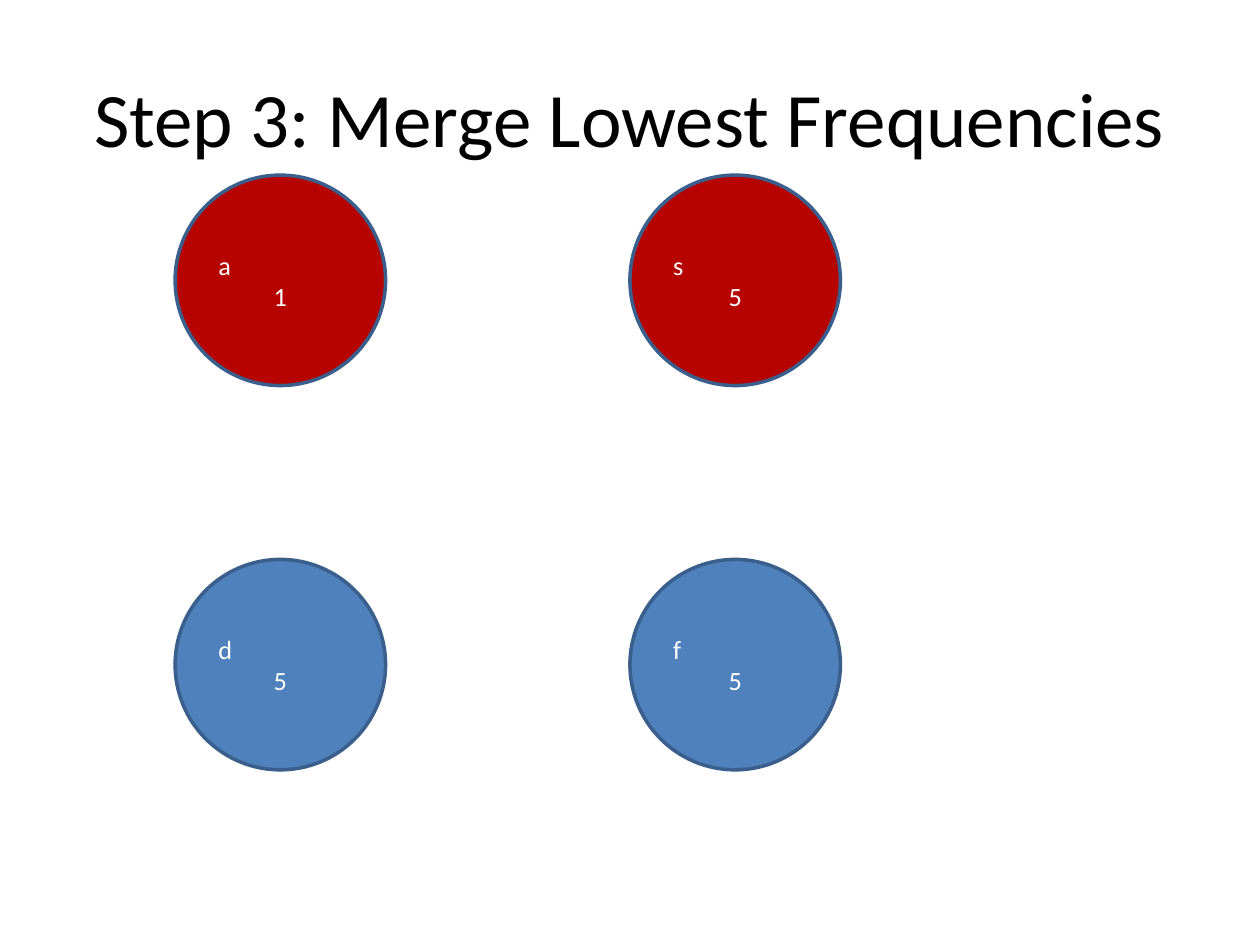
from pptx import Presentation
from pptx.dml.color import RGBColor
from pptx.enum.shapes import MSO_SHAPE
from pptx.enum.text import MSO_ANCHOR, PP_ALIGN
from pptx.util import Inches, Pt

OVAL = MSO_SHAPE.OVAL
MIDDLE = MSO_ANCHOR.MIDDLE
LEFT, CENTER = PP_ALIGN.LEFT, PP_ALIGN.CENTER

FONT = "Calibri"
MERGED, WAITING, OUTLINE = "B60300", "4F81BD", "3A5F8C"
NODE_ROWS = [
    (MERGED, [("a", 1), ("s", 5)]),
    (WAITING, [("d", 5), ("f", 5)]),
]
NODE_SIZE = 1.67
COLUMN_STEP, ROW_STEP = 3.61, 3.05


def color(hex_string):
    return RGBColor.from_string(hex_string)


def style_paragraph(para, size, hex_string, alignment):
    para.alignment = alignment
    for span in para.runs:
        span.font.name = FONT
        span.font.size = Pt(size)
        span.font.color.rgb = color(hex_string)


def add_title(page, text, left, top, width, height):
    title = page.shapes.title
    title.left, title.top = Inches(left), Inches(top)
    title.width, title.height = Inches(width), Inches(height)
    frame = title.text_frame
    frame.text = text
    frame.vertical_anchor = MIDDLE
    style_paragraph(frame.paragraphs[0], 44, "000000", CENTER)


def add_node(page, symbol, frequency, fill, left, top, size):
    node = page.shapes.add_shape(
        OVAL, Inches(left), Inches(top), Inches(size), Inches(size)
    )
    node.shadow.inherit = False
    node.fill.solid()
    node.fill.fore_color.rgb = color(fill)
    node.line.color.rgb = color(OUTLINE)
    node.line.width = Pt(2)
    frame = node.text_frame
    frame.text = f"{symbol}\n{frequency}"
    frame.vertical_anchor = MIDDLE
    for para, alignment in zip(frame.paragraphs, (LEFT, CENTER)):
        style_paragraph(para, 15, "FFFFFF", alignment)


def add_node_grid(page, left, top):
    for row, (fill, nodes) in enumerate(NODE_ROWS):
        for column, (symbol, frequency) in enumerate(nodes):
            add_node(
                page, symbol, frequency, fill,
                left + column * COLUMN_STEP, top + row * ROW_STEP, NODE_SIZE,
            )


def main():
    deck = Presentation()
    deck.slide_width, deck.slide_height = Inches(10), Inches(7.5)
    page = deck.slides.add_slide(deck.slide_layouts.get_by_name("Title Only"))
    add_title(page, "Step 3: Merge Lowest Frequencies", 0.5, 0.3, 9, 1.25)
    add_node_grid(page, 1.39, 1.39)
    deck.save("out.pptx")


if __name__ == "__main__":
    main()
